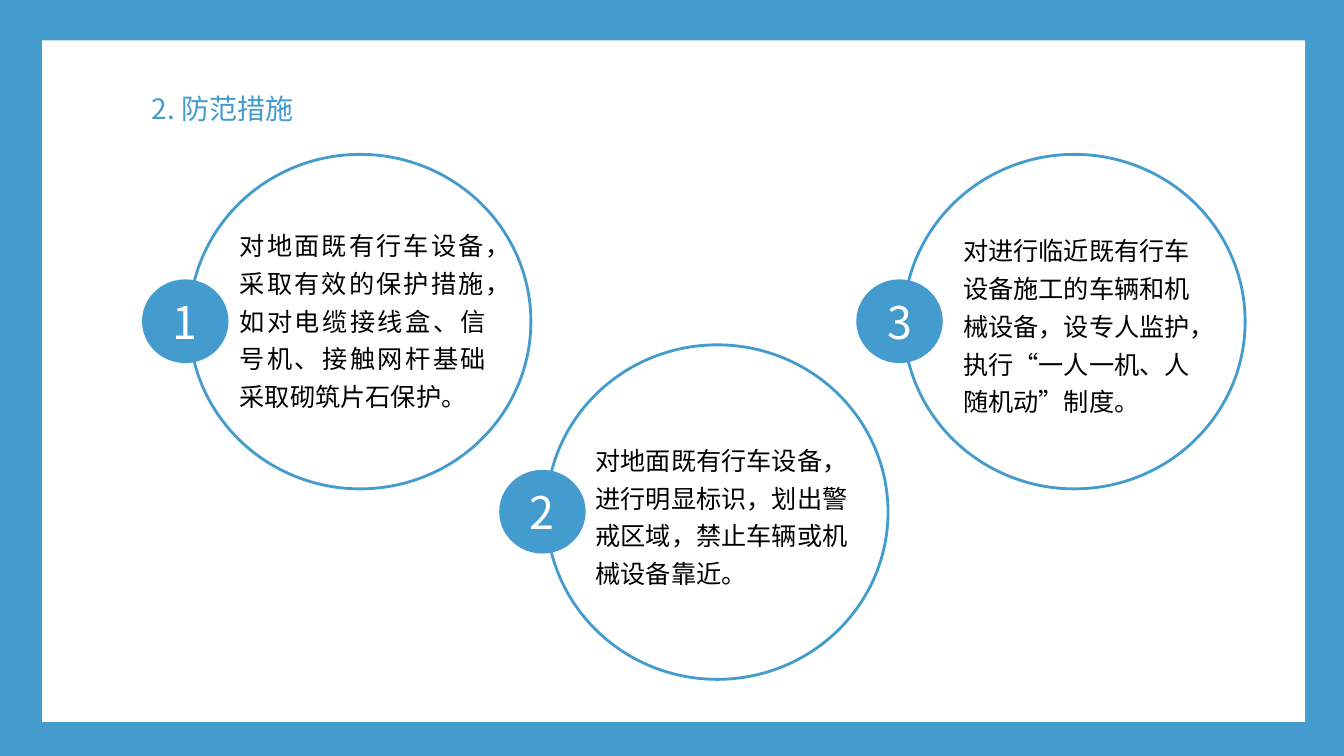
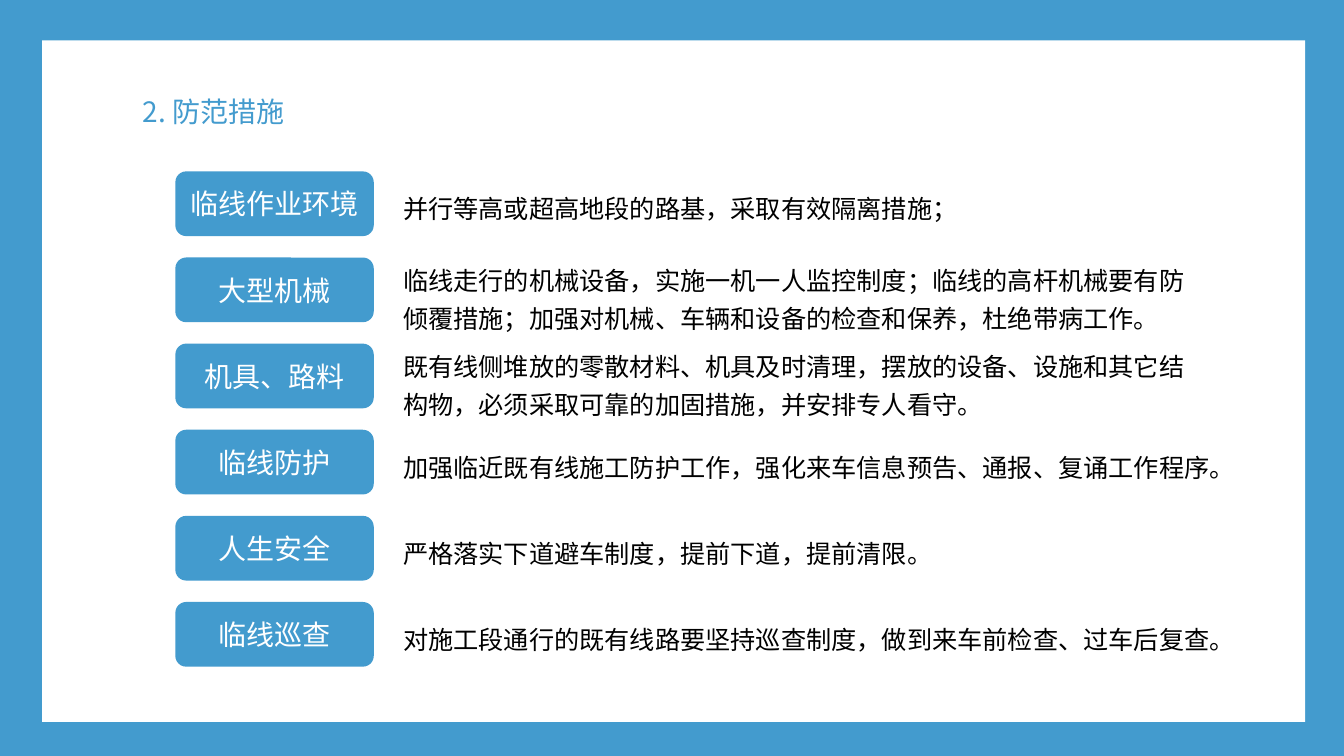
import lxml.etree
import pptx
import pptx.dml.color
import pptx.enum.shapes
import pptx.enum.text
import pptx.oxml.ns
import pptx.util

Cm = pptx.util.Cm
Shape = pptx.enum.shapes.MSO_SHAPE
Align = pptx.enum.text.PP_ALIGN
Anchor = pptx.enum.text.MSO_ANCHOR

BLUE = pptx.dml.color.RGBColor(0x43, 0x9B, 0xCE)
WHITE = pptx.dml.color.RGBColor(0xFF, 0xFF, 0xFF)
BLACK = pptx.dml.color.RGBColor(0x00, 0x00, 0x00)
FONT = "Noto Sans CJK SC"
TITLE = "2. 防范措施"

CIRCLES = [
    (3.89, "对地面既有行车设备，采取有效的保护措施，如对电缆接线盒、信号机、接触网杆基础采取砌筑片石保护。",
     (2.21, 1.6, 6.71, 4.98), Align.JUSTIFY),
    (8.69, "对地面既有行车设备，进行明显标识，划出警戒区域，禁止车辆或机械设备靠近。",
     (2.18, 2.21, 6.86, 4.01), Align.LEFT),
    (3.89, "对进行临近既有行车设备施工的车辆和机械设备，设专人监护，执行“一人一机、人随机动”制度。",
     (2.44, 1.73, 6.55, 4.98), Align.LEFT),
]

MEASURES = [
    ("临线作业环境", "并行等高或超高地段的路基，采取有效隔离措施；", 1),
    ("大型机械", "临线走行的机械设备，实施一机一人监控制度；临线的高杆机械要有防倾覆措施；"
     "加强对机械、车辆和设备的检查和保养，杜绝带病工作。", 2),
    ("机具、路料", "既有线侧堆放的零散材料、机具及时清理，摆放的设备、设施和其它结构物，"
     "必须采取可靠的加固措施，并安排专人看守。", 2),
    ("临线防护", "加强临近既有线施工防护工作，强化来车信息预告、通报、复诵工作程序。", 1),
    ("人生安全", "严格落实下道避车制度，提前下道，提前清限。", 1),
    ("临线巡查", "对施工段通行的既有线路要坚持巡查制度，做到来车前检查、过车后复查。", 1),
]


def write(box, text, size=18, color=BLACK, align=Align.LEFT, spacing=None,
          anchor=Anchor.TOP, wrap=True):
    frame = box.text_frame
    frame.word_wrap = wrap
    frame.vertical_anchor = anchor
    para = frame.paragraphs[0]
    para.alignment = align
    para.line_spacing = spacing
    span = para.add_run()
    span.text = text
    span.font.size = pptx.util.Pt(size)
    span.font.color.rgb = color
    span.font.name = FONT
    east_asian = lxml.etree.SubElement(span.font._element, pptx.oxml.ns.qn("a:ea"))
    east_asian.set("typeface", FONT)


def add_text(page, left, top, width, height, text, **style):
    box = page.shapes.add_textbox(Cm(left), Cm(top), Cm(width), Cm(height))
    write(box, text, **style)
    box.text_frame.auto_size = pptx.enum.text.MSO_AUTO_SIZE.SHAPE_TO_FIT_TEXT


def add_figure(page, kind, left, top, width, height, fill=None, line=None):
    figure = page.shapes.add_shape(kind, Cm(left), Cm(top), Cm(width), Cm(height))
    figure.shadow.inherit = False
    if fill is None:
        figure.fill.background()
    else:
        figure.fill.solid()
        figure.fill.fore_color.rgb = fill
    if line is None:
        figure.line.fill.background()
    else:
        figure.line.color.rgb = line
        figure.line.width = pptx.util.Pt(2)
    return figure


def add_page(deck, title_left, title_top):
    page = deck.slides.add_slide(deck.slide_layouts[6])
    add_figure(page, Shape.RECTANGLE, 1.06, 1.02, 31.83, 17.17, fill=WHITE)
    add_text(page, title_left, title_top, 16.94, 1.12, TITLE, size=20, color=BLUE)
    return page


def add_circle(page, left, top, number, text, text_area, align):
    add_figure(page, Shape.OVAL, left + 1.19, top, 8.61, 8.43, line=BLUE)
    badge = add_figure(page, Shape.OVAL, left, top + 3.15, 2.18, 2.11, fill=BLUE)
    write(badge, str(number), size=32, color=WHITE, align=Align.CENTER,
          anchor=Anchor.MIDDLE, wrap=False)
    inset_left, inset_top, width, height = text_area
    add_text(page, left + inset_left, top + inset_top, width, height, text,
             align=align, spacing=1.25)


def add_measure(page, left, top, label, text, lines):
    label_height = 1.63
    tab = add_figure(page, Shape.ROUNDED_RECTANGLE, left, top, 5, label_height, fill=BLUE)
    write(tab, label, size=20, color=WHITE, align=Align.CENTER, anchor=Anchor.MIDDLE)
    width, height, drop = (21.16, 1.14, 0) if lines == 1 else (20.65, 2.08, 0.1)
    add_text(page, left + 5.49, top + (label_height - height) / 2 + drop,
             width, height, text, spacing=1.25)


def build_circles(deck):
    page = add_page(deck, 3.58, 2.18)
    for index, (top, text, text_area, align) in enumerate(CIRCLES):
        add_circle(page, 3.58 + 9 * index, top, index + 1, text, text_area, align)


def build_measures(deck):
    page = add_page(deck, 3.35, 2.26)
    for index, (label, text, lines) in enumerate(MEASURES):
        add_measure(page, 4.42, 4.32 + 2.17 * index, label, text, lines)


def main():
    deck = pptx.Presentation()
    deck.slide_width = Cm(33.87)
    deck.slide_height = Cm(19.05)
    background = deck.slide_master.background.fill
    background.solid()
    background.fore_color.rgb = BLUE
    build_circles(deck)
    build_measures(deck)
    deck.save("out.pptx")


if __name__ == "__main__":
    main()
